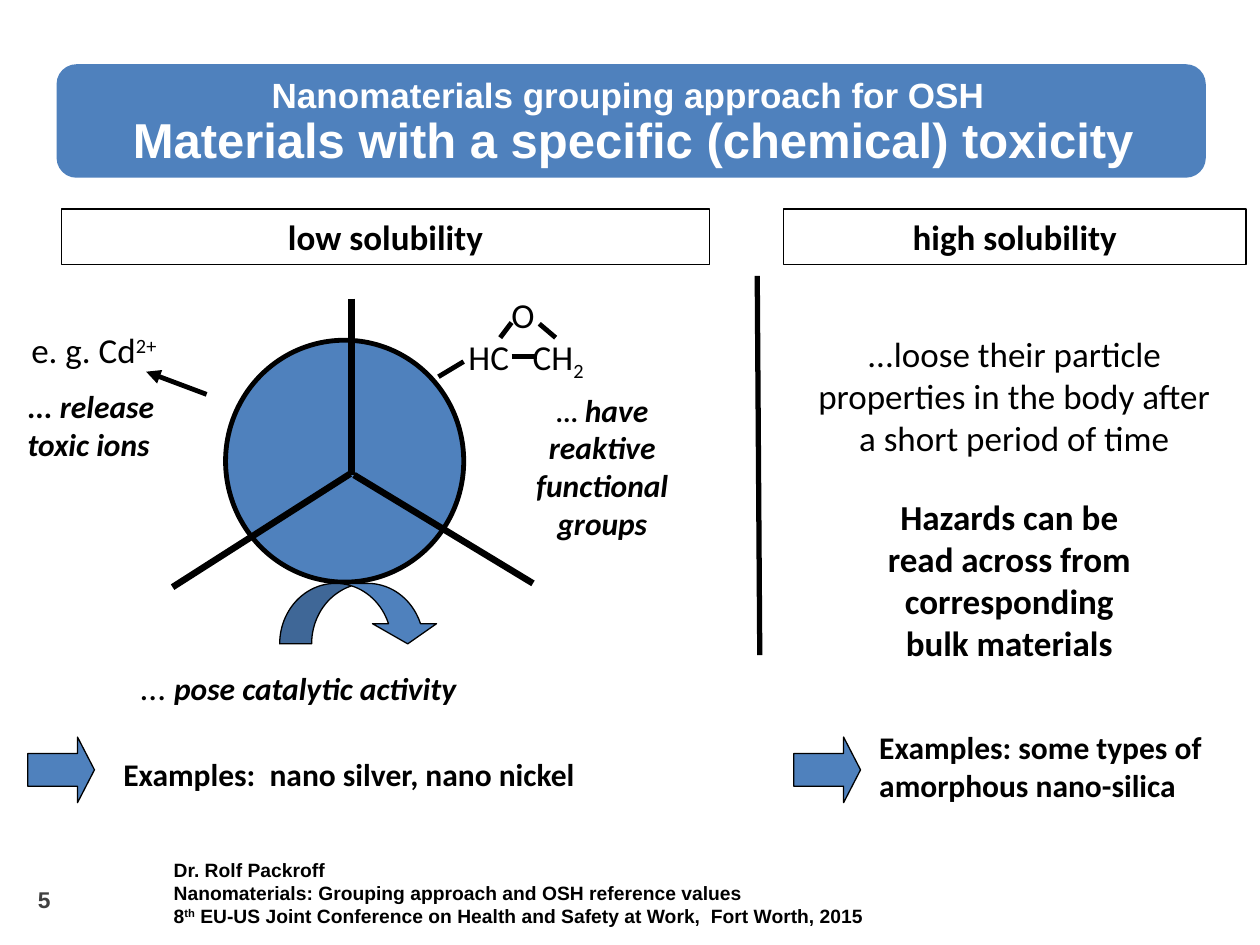
from dataclasses import dataclass

from lxml.etree import SubElement
from pptx import Presentation
from pptx.dml.color import RGBColor
from pptx.enum.shapes import MSO_CONNECTOR, MSO_SHAPE
from pptx.enum.text import MSO_ANCHOR, MSO_AUTO_SIZE, PP_ALIGN
from pptx.oxml.ns import qn
from pptx.util import Inches, Pt


@dataclass(frozen=True)
class Theme:
    blue: str = "4F81BD"
    black: str = "000000"
    white: str = "FFFFFF"
    grey: str = "404040"
    head_font: str = "Arial"
    body_font: str = "Calibri"
    title: int = 28
    body: int = 20
    label: int = 18
    small: int = 16
    number: int = 13
    footer: int = 11
    thin: float = 0.75
    medium: float = 2.75
    thick: float = 3.75


THEME = Theme()


def add_run(p, text, size=THEME.body, font=THEME.body_font, color=THEME.black,
            bold=False, italic=False, baseline=0):
    """Add text to a paragraph; baseline is a percentage, up or down."""
    r = p.add_run()
    r.text = text
    r.font.size = Pt(size)
    r.font.name = font
    r.font.color.rgb = RGBColor.from_string(color)
    r.font.bold = bold
    r.font.italic = italic
    if baseline:
        r._r.get_or_add_rPr().set("baseline", str(baseline * 1000))


class SlideBuilder:
    def __init__(self, slide, theme):
        self.slide = slide
        self.theme = theme

    def set_lines(self, tf, lines, align=PP_ALIGN.LEFT, spacing=None, **fmt):
        """Each line is a string or a list of (text, format) runs."""
        tf.word_wrap = True
        tf.auto_size = MSO_AUTO_SIZE.NONE
        for i, line in enumerate(lines):
            p = tf.paragraphs[0] if i == 0 else tf.add_paragraph()
            p.alignment = align
            p.line_spacing = spacing
            runs = [(line, {})] if isinstance(line, str) else line
            for text, own in runs:
                add_run(p, text, **{**fmt, **own})

    def text(self, box, lines, inset=True, **fmt):
        sp = self.slide.shapes.add_textbox(*map(Inches, box))
        tf = sp.text_frame
        if not inset:
            tf.margin_left = tf.margin_top = tf.margin_bottom = 0
        self.set_lines(tf, lines, **fmt)

    def title(self, box, lines, **fmt):
        sp = self.slide.shapes.title
        sp.left, sp.top, sp.width, sp.height = map(Inches, box)
        sp.text_frame.vertical_anchor = MSO_ANCHOR.TOP
        self.set_lines(sp.text_frame, lines, **fmt)
        return sp

    def shape(self, kind, box, fill=None, line=None, width=None, adj=()):
        sp = self.slide.shapes.add_shape(kind, *map(Inches, box))
        sp.shadow.inherit = False
        if fill:
            sp.fill.solid()
            sp.fill.fore_color.rgb = RGBColor.from_string(fill)
        else:
            sp.fill.background()
        sp.line.color.rgb = RGBColor.from_string(line or self.theme.black)
        sp.line.width = Pt(width or self.theme.thin)
        for i, value in enumerate(adj):
            sp.adjustments[i] = value
        return sp

    def heading(self, box, text):
        sp = self.shape(MSO_SHAPE.RECTANGLE, box)
        sp.text_frame.vertical_anchor = MSO_ANCHOR.TOP
        self.set_lines(sp.text_frame, [text], align=PP_ALIGN.CENTER, bold=True)

    def line(self, start, end, width, arrow=False):
        cn = self.slide.shapes.add_connector(
            MSO_CONNECTOR.STRAIGHT, *map(Inches, start + end))
        cn.line.color.rgb = RGBColor.from_string(self.theme.black)
        cn.line.width = Pt(width)
        sp_pr = cn.element.spPr
        if arrow:
            SubElement(sp_pr.find(qn("a:ln")), qn("a:tailEnd"), type="triangle")
        SubElement(sp_pr, qn("a:effectLst"))


def main():
    t = THEME
    prs = Presentation()
    prs.slide_width, prs.slide_height = Inches(10), Inches(7.5)
    s = SlideBuilder(prs.slides.add_slide(prs.slide_layouts[5]), t)
    center = PP_ALIGN.CENTER

    # Title on its banner
    title = s.title((0.53, 0.57, 8.99, 0.83), [
        [("Nanomaterials grouping approach for OSH ", {"size": t.body})],
        "Materials with a specific (chemical) toxicity",
    ], align=center, spacing=0.9, size=t.title, font=t.head_font,
        color=t.white, bold=True)
    banner = s.shape(MSO_SHAPE.ROUNDED_RECTANGLE, (0.46, 0.52, 9.1, 0.88),
                     t.blue, t.blue, 1.5, adj=(0.167,))
    title.element.addprevious(banner.element)

    # Footer and slide number
    s.text((1.28, 6.76, 6.31, 0.66), [
        "Dr. Rolf Packroff",
        "Nanomaterials: Grouping approach and OSH reference values",
        [("8", {}), ("th", {"baseline": 30}),
         (" EU-US Joint Conference on Health and Safety at Work,  Fort Worth, 2015", {})],
    ], size=t.footer, font=t.head_font, bold=True)
    s.text((0.3, 7.03, 0.57, 0.4), ["5"], inset=False, size=t.number,
           font=t.head_font, color=t.grey, bold=True)

    # Particle divided into three sectors
    s.shape(MSO_SHAPE.OVAL, (1.79, 2.7, 1.89, 1.92), t.blue, width=t.medium)
    for start, end in (((2.79, 2.37), (2.79, 3.77)),
                       ((2.81, 3.77), (4.23, 4.63)),
                       ((2.78, 3.76), (1.37, 4.66))):
        s.line(start, end, t.thick)

    # Sector 1: ion release
    s.line((1.64, 3.13), (1.16, 2.95), t.medium, arrow=True)
    s.text((0.15, 2.56, 1.39, 0.44), [[("e. g. Cd", {}), ("2+", {"baseline": 30})]])
    s.text((0.12, 3.02, 1.42, 0.71), ["... release", "toxic ions"],
           size=t.label, bold=True, italic=True)

    # Sector 2: catalytic activity
    s.shape(MSO_SHAPE.CURVED_DOWN_ARROW, (2.22, 4.63, 1.27, 0.48), t.blue,
            adj=(0.529, 1.058, 0.333))
    s.text((1.01, 5.23, 3.12, 0.44), [
        [("... ", {"size": t.body, "bold": False, "italic": False}),
         ("pose catalytic activity", {})],
    ], size=t.label, bold=True, italic=True)

    # Sector 3: functional groups, with an epoxide ring
    s.text((4.04, 3.05, 1.48, 1.31), [
        [("... ", {"size": t.small}), ("have", {})],
        "reaktive", "functional", "groups",
    ], align=center, size=t.label, bold=True, italic=True)
    s.text((3.62, 2.61, 0.6, 0.44), ["HC"])
    s.text((4.13, 2.61, 0.84, 0.44), [[("CH", {}), ("2", {"baseline": -25})]])
    s.text((3.96, 2.28, 0.42, 0.43), ["O"])
    for start, end in (((3.48, 2.99), (3.68, 2.87)),
                       ((3.97, 2.68), (4.06, 2.56)),
                       ((4.06, 2.83), (4.26, 2.83)),
                       ((4.41, 2.68), (4.28, 2.57))):
        s.line(start, end, t.medium)

    # Column headings and divider
    s.heading((0.49, 1.66, 5.14, 0.44), "low solubility")
    s.heading((6.22, 1.66, 3.67, 0.44), "high solubility")
    s.line((6.01, 2.19), (6.03, 5.2), 3)

    # High solubility column
    s.text((6.3, 2.59, 3.5, 1.11), [
        "...loose their particle",
        "properties in the body after a short period of time",
    ], align=center)
    s.text((6.77, 3.88, 2.48, 1.45), [
        "Hazards can be", "read across from", "corresponding", "bulk materials",
    ], align=center, bold=True)

    # Examples, each with its arrow
    for x, box, lines in (
        (0.22, (0.88, 5.94, 4.45, 0.4), ["Examples:  nano silver, nano nickel"]),
        (6.3, (6.88, 5.73, 2.84, 0.71),
         ["Examples: some types of", "amorphous nano-silica"]),
    ):
        s.shape(MSO_SHAPE.RIGHT_ARROW, (x, 5.85, 0.53, 0.52), t.blue,
                adj=(0.5, 0.258))
        s.text(box, lines, size=t.label, bold=True)

    prs.save("out.pptx")


if __name__ == "__main__":
    main()
